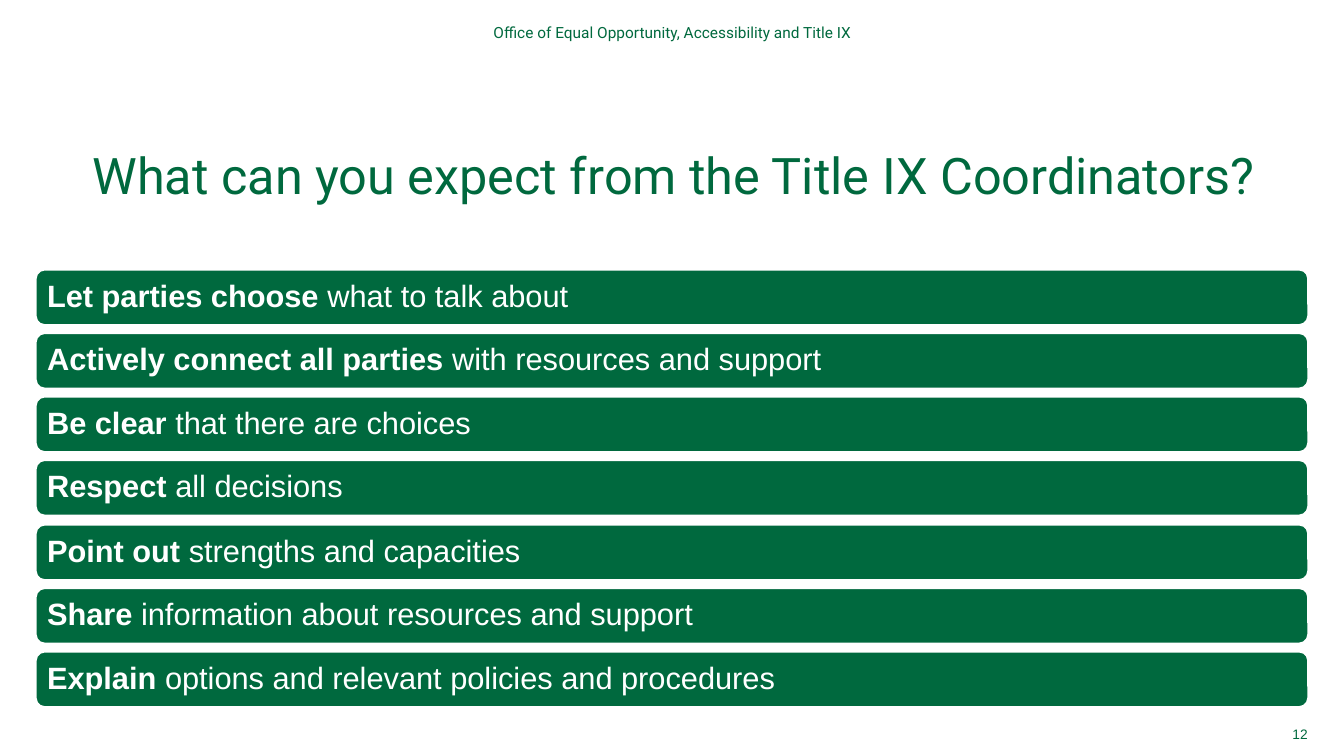
from dataclasses import dataclass

from pptx import Presentation
from pptx.dml.color import RGBColor
from pptx.enum.shapes import MSO_SHAPE
from pptx.enum.text import MSO_ANCHOR, PP_ALIGN
from pptx.util import Emu, Pt

EMU_PER_PX = 9144  # 100 px to the inch
GREEN = "00693E"
WHITE = "FFFFFF"

BAR_LEFT, BAR_WIDTH, BAR_HEIGHT = 35, 1263, 56
FIRST_BAR_TOP, LAST_BAR_TOP = 267, 646
BAR_INSET = 9


@dataclass
class Expectation:
    action: str
    detail: str


@dataclass
class Label:
    text: str
    left: int
    top: int
    width: int
    height: int
    font: str
    size: float
    align: PP_ALIGN
    anchor: MSO_ANCHOR = MSO_ANCHOR.MIDDLE
    line_spacing: float = 1.0


EXPECTATIONS = [
    Expectation("Let parties choose", "what to talk about"),
    Expectation("Actively connect all parties", "with resources and support"),
    Expectation("Be clear", "that there are choices"),
    Expectation("Respect", "all decisions"),
    Expectation("Point out", "strengths and capacities"),
    Expectation("Share", "information about resources and support"),
    Expectation("Explain", "options and relevant policies and procedures"),
]

LABELS = [
    Label("What can you expect from the Title IX Coordinators?",
          37, 152, 1263, 101, "Roboto", 36, PP_ALIGN.CENTER, MSO_ANCHOR.TOP, 0.85),
    Label("Office of Equal Opportunity, Accessibility and Title IX",
          261, 20, 812, 24, "Roboto", 11, PP_ALIGN.CENTER),
    Label("12", 1240, 716, 57, 24, "Arial", 9.8, PP_ALIGN.RIGHT),
]


def px(length: int) -> Emu:
    return Emu(length * EMU_PER_PX)


def color(value: str) -> RGBColor:
    return RGBColor.from_string(value)


def set_frame(frame, inset: int, anchor: MSO_ANCHOR) -> None:
    frame.word_wrap = True
    frame.vertical_anchor = anchor
    frame.margin_left = frame.margin_right = px(inset)
    frame.margin_top = frame.margin_bottom = px(inset)


def set_font(para, name: str, size: float, value: str) -> None:
    para.font.name = name
    para.font.size = Pt(size)
    para.font.color.rgb = color(value)


def add_bar(page, expectation: Expectation, top: int) -> None:
    bar = page.shapes.add_shape(MSO_SHAPE.ROUNDED_RECTANGLE, px(BAR_LEFT), px(top),
                                px(BAR_WIDTH), px(BAR_HEIGHT))
    bar.shadow.inherit = False
    bar.fill.solid()
    bar.fill.fore_color.rgb = color(GREEN)
    bar.line.color.rgb = color(WHITE)
    bar.line.width = Pt(2)
    set_frame(bar.text_frame, BAR_INSET, MSO_ANCHOR.MIDDLE)
    para = bar.text_frame.paragraphs[0]
    para.alignment = PP_ALIGN.LEFT
    para.line_spacing = 0.9
    set_font(para, "Arial", 22, WHITE)
    for text, bold in ((expectation.action + " ", True), (expectation.detail, False)):
        span = para.add_run()
        span.text = text
        span.font.bold = bold


def add_label(page, label: Label) -> None:
    box = page.shapes.add_textbox(px(label.left), px(label.top),
                                  px(label.width), px(label.height))
    set_frame(box.text_frame, 0, label.anchor)
    para = box.text_frame.paragraphs[0]
    para.text = label.text
    para.alignment = label.align
    para.line_spacing = label.line_spacing
    set_font(para, label.font, label.size, GREEN)


def main() -> None:
    deck = Presentation()
    deck.slide_width, deck.slide_height = px(1333), px(750)
    page = deck.slides.add_slide(deck.slide_layouts[6])
    pitch = (LAST_BAR_TOP - FIRST_BAR_TOP) / (len(EXPECTATIONS) - 1)
    for row, expectation in enumerate(EXPECTATIONS):
        add_bar(page, expectation, round(FIRST_BAR_TOP + row * pitch))
    for label in LABELS:
        add_label(page, label)
    deck.save("out.pptx")


if __name__ == "__main__":
    main()
